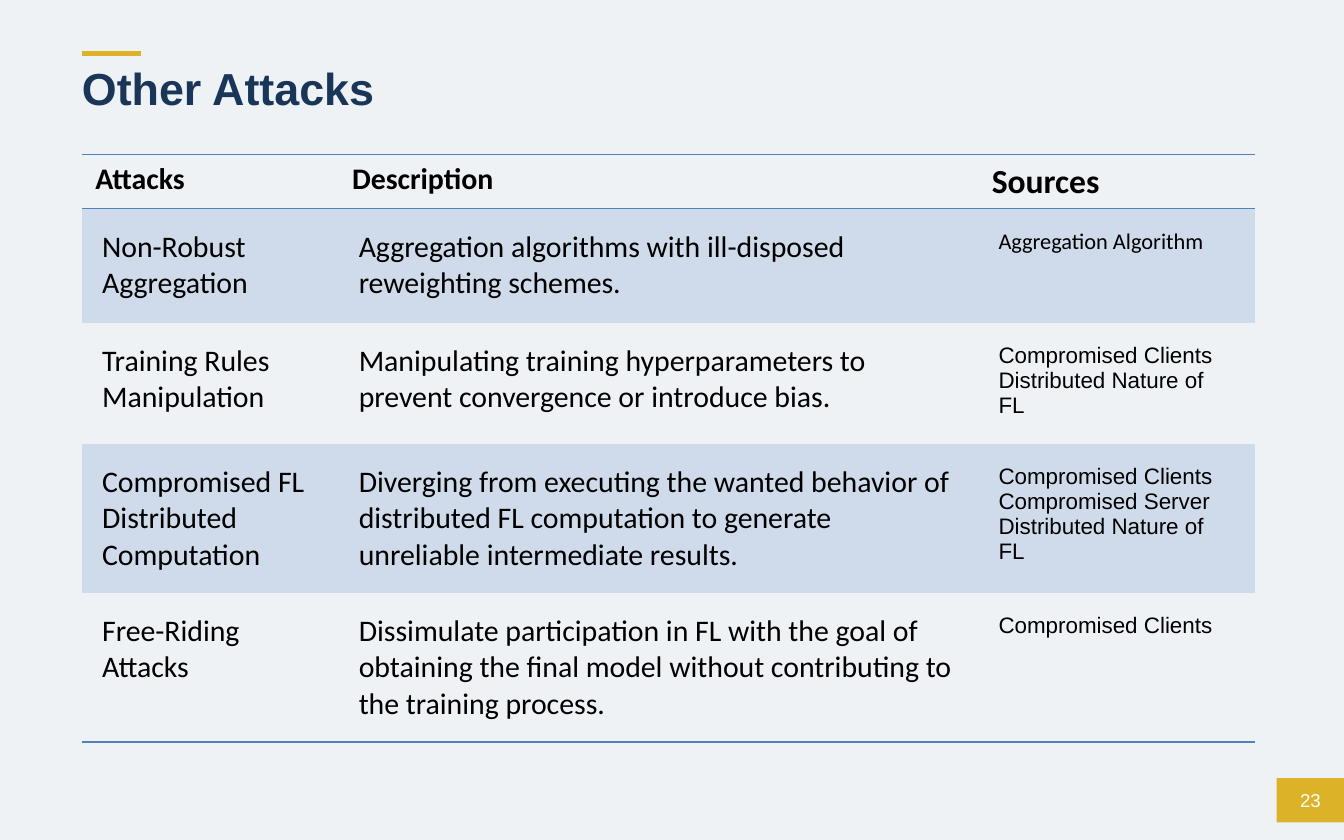
from lxml import etree
from pptx import Presentation, util as u
from pptx.dml.color import RGBColor
from pptx.enum import shapes, text
from pptx.oxml.ns import qn

BACKGROUND = RGBColor(0xEF, 0xF2, 0xF5)
BAND = RGBColor(0xCF, 0xDB, 0xEA)
RULE = RGBColor(0x4F, 0x81, 0xBD)
GOLD = RGBColor(0xDC, 0xB3, 0x28)
NAVY = RGBColor(0x19, 0x35, 0x58)
BLACK = RGBColor(0, 0, 0)
WHITE = RGBColor(255, 255, 255)

TITLE = "Other Attacks"
PAGE_NUMBER = "23"
HEADER = ("Attacks", "Description", ["Sources"])
ATTACKS = [
    ("Non-Robust Aggregation",
     "Aggregation algorithms with ill-disposed reweighting schemes.",
     ["Aggregation Algorithm"]),
    ("Training Rules Manipulation",
     "Manipulating training hyperparameters to prevent convergence or introduce bias.",
     ["Compromised Clients", "Distributed Nature of FL"]),
    ("Compromised FL Distributed Computation",
     "Diverging from executing the wanted behavior of distributed FL computation "
     "to generate unreliable intermediate results.",
     ["Compromised Clients", "Compromised Server", "Distributed Nature of FL"]),
    ("Free-Riding Attacks",
     "Dissimulate participation in FL with the goal of obtaining the final model "
     "without contributing to the training process.",
     ["Compromised Clients"]),
]
COLUMN_WIDTHS = (1.91, 4.76, 2.06)
ROW_HEIGHTS = (0.4, 0.85, 0.86, 1.11, 1.11)
LEFT = 0.61
TABLE_TOP = 1.15


def inches(*lengths):
    return [u.Inches(length) for length in lengths]


def set_all(target, **values):
    for name, value in values.items():
        setattr(target, name, value)


def set_margins(target, horizontal, vertical):
    for side in ("left", "right"):
        setattr(target, f"margin_{side}", u.Inches(horizontal))
    for side in ("top", "bottom"):
        setattr(target, f"margin_{side}", u.Inches(vertical))


def write(frame, lines, color, size, name="Arial", bold=False, **paragraph_format):
    frame.text = "\n".join(lines)
    for paragraph in frame.paragraphs:
        set_all(paragraph, **paragraph_format)
        set_all(paragraph.font, size=u.Pt(size), name=name, bold=bold)
        paragraph.font.color.rgb = color


def set_borders(cell, ruled_sides):
    properties = cell._tc.get_or_add_tcPr()
    for side in "LRTB":
        line = etree.SubElement(properties, qn(f"a:ln{side}"), w=str(u.Pt(1)))
        if side in ruled_sides:
            fill = etree.SubElement(line, qn("a:solidFill"))
            etree.SubElement(fill, qn("a:srgbClr"), val=str(RULE))
        else:
            etree.SubElement(line, qn("a:noFill"))


def add_heading(slide):
    accent = slide.shapes.add_connector(
        shapes.MSO_CONNECTOR.STRAIGHT, *inches(LEFT, 0.4, 1.05, 0.4))
    accent.line.color.rgb = GOLD
    accent.line.width = u.Pt(2.75)
    etree.SubElement(accent._element.spPr, qn("a:effectLst"))

    title = slide.shapes.add_textbox(*inches(LEFT, 0.45, 7.35, 0.69))
    title.text_frame.word_wrap = True
    set_margins(title.text_frame, 0, 0.05)
    write(title.text_frame, [TITLE], NAVY, 24, bold=True, line_spacing=0.9)


def add_attack_table(slide):
    rows = [HEADER] + ATTACKS
    table = slide.shapes.add_table(
        len(rows), len(COLUMN_WIDTHS),
        *inches(LEFT, TABLE_TOP, sum(COLUMN_WIDTHS), sum(ROW_HEIGHTS))).table
    set_all(table, first_row=False, horz_banding=False)
    for column, width in zip(table.columns, COLUMN_WIDTHS):
        column.width = u.Inches(width)
    for r, (row, height) in enumerate(zip(rows, ROW_HEIGHTS)):
        table.rows[r].height = u.Inches(height)
        is_header = r == 0
        ruled_sides = "TB" if is_header else "B" if r == len(rows) - 1 else "T" if r == 1 else ""
        for c, content in enumerate(row):
            cell = table.cell(r, c)
            set_borders(cell, ruled_sides)
            if r % 2:
                cell.fill.solid()
                cell.fill.fore_color.rgb = BAND
            else:
                cell.fill.background()
            is_source = isinstance(content, list)
            lines = content if is_source else [content]
            if is_header:
                set_margins(cell, 0.1, 0.05)
                size = 18 if is_source else 16
            else:
                set_margins(cell, 0.15, 0.15)
                size = 12 if is_source else 16
            font = "Arial" if is_source and r > 1 else "Calibri"
            write(cell.text_frame, lines, BLACK, size, font, is_header)


def add_page_number(slide):
    badge = slide.shapes.add_shape(
        shapes.MSO_SHAPE.RECTANGLE, *inches(9.5, 5.79, 0.5, 0.33))
    badge.shadow.inherit = False
    badge.fill.solid()
    badge.fill.fore_color.rgb = GOLD
    badge.line.fill.background()
    set_margins(badge.text_frame, 0, 0.04)
    badge.text_frame.vertical_anchor = text.MSO_ANCHOR.MIDDLE
    write(badge.text_frame, [PAGE_NUMBER], WHITE, 10, alignment=text.PP_ALIGN.CENTER)


def main():
    presentation = Presentation()
    set_all(presentation, slide_width=u.Inches(10), slide_height=u.Inches(6.25))
    slide = presentation.slides.add_slide(presentation.slide_layouts[6])
    slide.background.fill.solid()
    slide.background.fill.fore_color.rgb = BACKGROUND
    add_heading(slide)
    add_attack_table(slide)
    add_page_number(slide)
    presentation.save("out.pptx")


if __name__ == "__main__":
    main()
